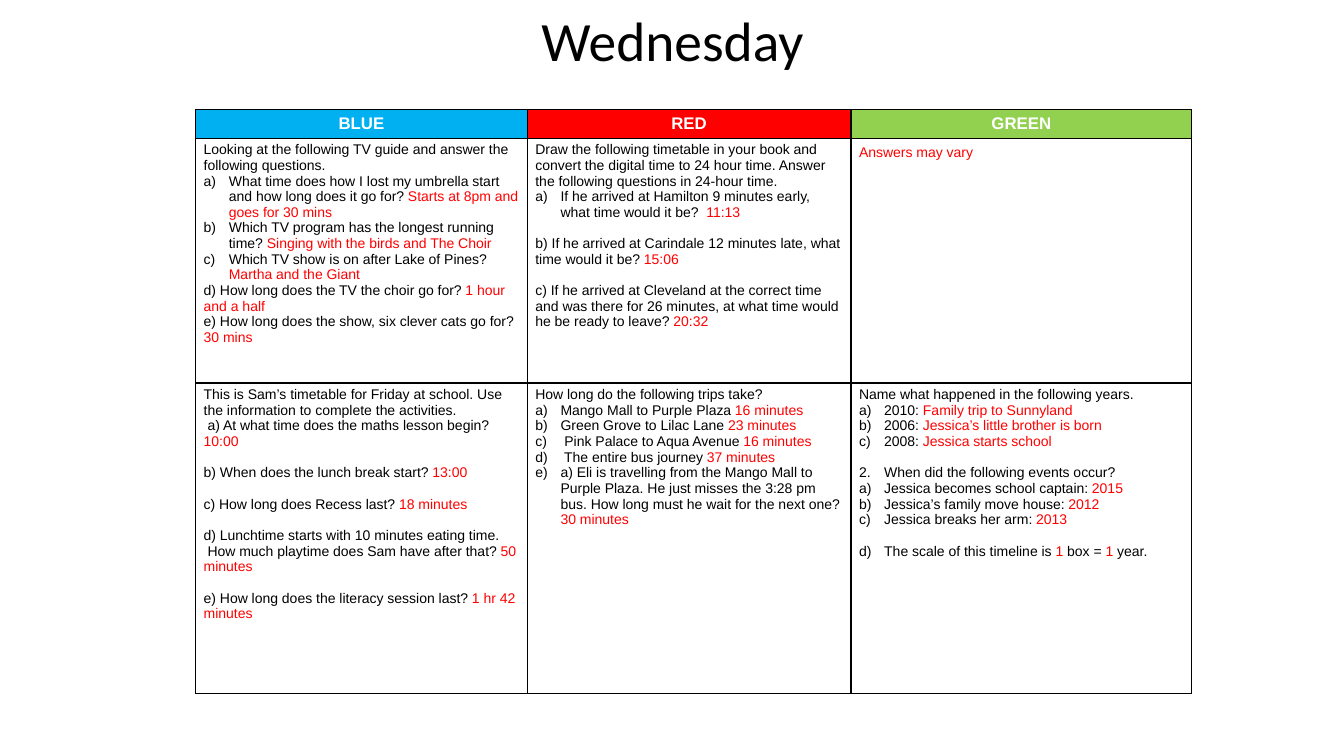
"""Build the Wednesday slide: a table of answers for three groups."""
from lxml.etree import SubElement
from pptx import Presentation
from pptx.dml.color import RGBColor as RGB
from pptx.enum.text import MSO_ANCHOR as Anchor, PP_ALIGN as Align
from pptx.oxml import parse_xml
from pptx.oxml.ns import nsdecls, qn
from pptx.util import Inches, Pt

HUES = {"black": "000000", "white": "FFFFFF", "answer": "FF0000",
        "BLUE": "00B0F0", "RED": "FF0000", "GREEN": "92D050"}
LISTS = {"*": {"type": "alphaLcParenR"},
         "#": {"type": "arabicPeriod", "startAt": "2"}}
GAP = Pt(11.2)


def add_run(para, text, hue, **form):
    """Add text in one colour with the given font values."""
    run = para.add_run()
    run.text = text
    run.font.color.rgb = RGB.from_string(HUES[hue])
    for key, value in form.items():
        setattr(run.font, key, value)


def style(cell, hue):
    """Fill a cell, set its margins and draw its four borders."""
    cell.fill.solid()
    cell.fill.fore_color.rgb = RGB.from_string(HUES[hue])
    edges = {"margin_left": 0.08, "margin_right": 0.08,
             "margin_top": 0.04, "margin_bottom": 0.04}
    for key, value in edges.items():
        setattr(cell, key, Inches(value))
    props = cell._tc.get_or_add_tcPr()
    for spot, side in enumerate("LRTB"):
        props.insert(spot, parse_xml(
            f'<a:ln{side} {nsdecls("a")} w="12700"><a:solidFill>'
            f'<a:srgbClr val="{HUES["black"]}"/></a:solidFill></a:ln{side}>'))


deck = Presentation()
deck.slide_width, deck.slide_height = Inches(13.33), Inches(7.5)
slide = deck.slides.add_slide(deck.slide_layouts[6])

box = slide.shapes.add_textbox(Inches(4.96), Inches(0.25), Inches(3.42), Inches(0.37))
frame = box.text_frame
frame.word_wrap = True
frame.vertical_anchor = Anchor.MIDDLE
title = frame.paragraphs[0]
title.alignment = Align.CENTER
title.line_spacing = 0.9
add_run(title, "Wednesday", "black", name="Calibri", size=Pt(39.6))

# Marks: ^ gap above, * lettered item, # numbered item, | switch to or from an answer
heads = ["BLUE", "RED", "GREEN"]
tasks = [
    [
        ["Looking at the following TV guide and answer the following questions.",
         "*What time does how I lost my umbrella start and how long does it go for? "
         "|Starts at 8pm and goes for 30 mins",
         "*Which TV program has the longest running time? "
         "|Singing with the birds and The Choir",
         "*Which TV show is on after Lake of Pines? |Martha and the Giant",
         "d) How long does the TV the choir go for?| 1 hour and a half",
         "e) How long does the show, six clever cats go for? |30 mins"],
        ["Draw the following timetable in your book and convert the digital time "
         "to 24 hour time. Answer the following questions in 24-hour time.",
         "*If he arrived at Hamilton 9 minutes early, what time would it be?  |11:13",
         "^b) If he arrived at Carindale 12 minutes late, what time would it be? |15:06",
         "^c) If he arrived at Cleveland at the correct time and was there for "
         "26 minutes, at what time would he be ready to leave? |20:32"],
        ["|Answers may vary"],
    ],
    [
        ["This is Sam’s timetable for Friday at school. "
         "Use the information to complete the activities.",
         " a) At what time does the maths lesson begin? |10:00",
         "^b) When does the lunch break start? |13:00",
         "^c) How long does Recess last? |18 minutes",
         "^d) Lunchtime starts with 10 minutes eating time.",
         " How much playtime does Sam have after that? |50 minutes",
         "^e) How long does the literacy session last? |1 hr 42 minutes"],
        ["How long do the following trips take?",
         "*Mango Mall to Purple Plaza |16 minutes",
         "*Green Grove to Lilac Lane |23 minutes",
         "* Pink Palace to Aqua Avenue |16 minutes",
         "* The entire bus journey |37 minutes",
         "*a) Eli is travelling from the Mango Mall to Purple Plaza. He just misses "
         "the 3:28 pm bus. How long must he wait for the next one? |30 minutes"],
        ["Name what happened in the following years.",
         "*2010: |Family trip to Sunnyland",
         "*2006: |Jessica’s little brother is born",
         "*2008: |Jessica starts school",
         "^#When did the following events occur?",
         "*Jessica becomes school captain: |2015",
         "*Jessica’s family move house: |2012",
         "*Jessica breaks her arm: |2013",
         "^*The scale of this timeline is |1| box = |1| year."],
    ],
]

widths, heights = [3.29, 3.21, 3.38], [0.27, 2.43, 3.08]
table = slide.shapes.add_table(3, 3, Inches(1.94), Inches(1.09),
                               Inches(sum(widths)), Inches(sum(heights))).table
table.first_row = table.horz_banding = False
for col, width in zip(table.columns, widths):
    col.width = Inches(width)
for row, height in zip(table.rows, heights):
    row.height = Inches(height)

for col, head in enumerate(heads):
    cell = table.cell(0, col)
    style(cell, head)
    para = cell.text_frame.paragraphs[0]
    para.alignment = Align.CENTER
    add_run(para, head, "white", name="Arial", size=Pt(12), bold=True)

for row, group in enumerate(tasks, 1):
    for col, lines in enumerate(group):
        cell = table.cell(row, col)
        style(cell, "white")
        frame = cell.text_frame
        for spot, line in enumerate(lines):
            para = frame.add_paragraph() if spot else frame.paragraphs[0]
            if line.startswith("^"):
                para.space_before = GAP
                line = line[1:]
            if line.startswith("|"):
                para.line_spacing = 1.15
            if line[0] in LISTS:
                props = para._p.get_or_add_pPr()
                props.set("marL", str(Inches(0.25)))
                props.set("indent", str(-Inches(0.25)))
                tint = SubElement(props, qn("a:buClr"))
                SubElement(tint, qn("a:srgbClr"), val=HUES["black"])
                SubElement(props, qn("a:buFont"), typeface="Arial")
                SubElement(props, qn("a:buAutoNum"), **LISTS[line[0]])
                line = line[1:]
            for turn, text in enumerate(line.split("|")):
                if text:
                    add_run(para, text, "answer" if turn % 2 else "black",
                            name="Arial", size=Pt(10), bold=False)

deck.save("out.pptx")
